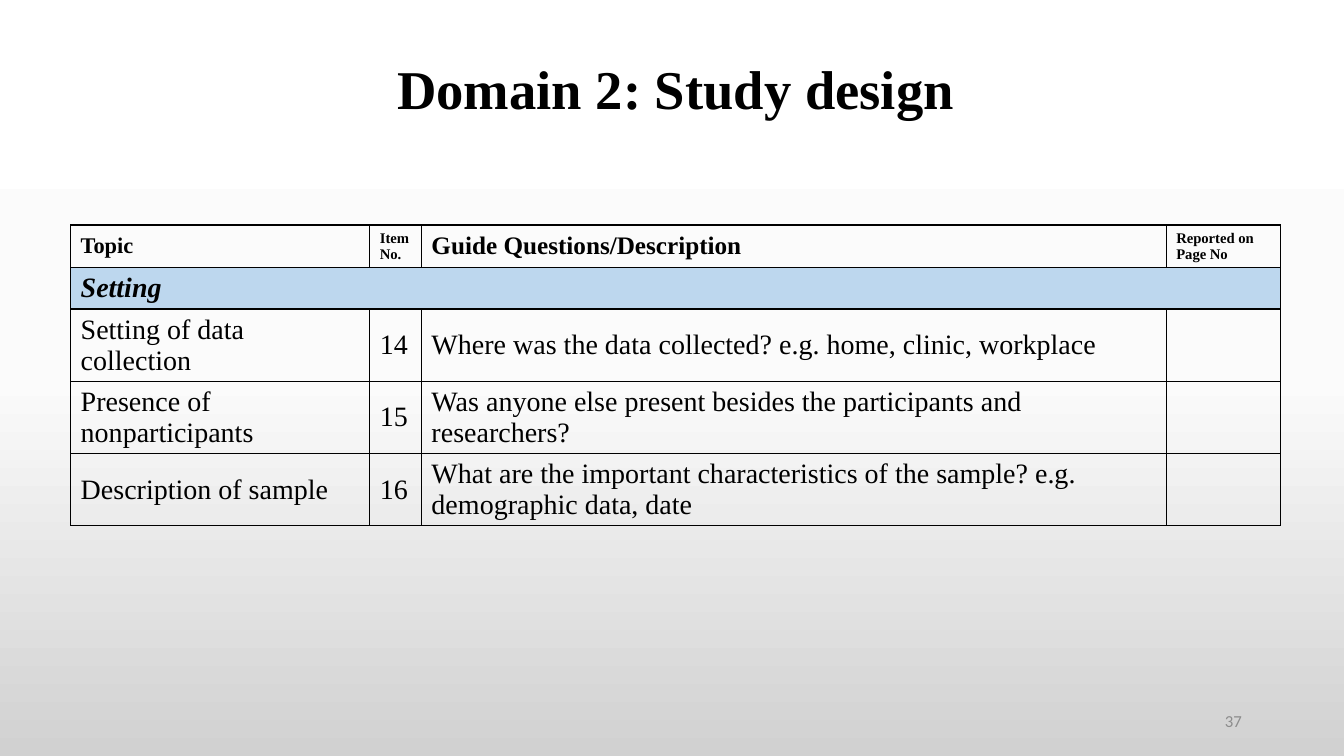
from copy import deepcopy

from pptx import Presentation
from pptx.dml.color import RGBColor
from pptx.enum.text import MSO_ANCHOR as ANCHOR, PP_ALIGN as ALIGN
from pptx.oxml import parse_xml
from pptx.oxml.ns import nsdecls, qn
from pptx.util import Cm, Pt

BLACK = RGBColor(0x00, 0x00, 0x00)
GRAY = RGBColor(0x8C, 0x8C, 0x8C)
BLUE = RGBColor(0xBD, 0xD7, 0xEE)
GRADIENT = [
    (0, RGBColor(0xFF, 0xFF, 0xFF)),
    (0.5, RGBColor(0xFB, 0xFB, 0xFB)),
    (1, RGBColor(0xD1, 0xD1, 0xD1)),
]
SERIF = "Times New Roman"
COLUMN_WIDTHS = [7.54, 1.3, 18.77, 2.87]
HEADER_SIZES = [16, 10.5, 18, 10.5]
ROW_HEIGHT = 1.04
ROWS = [
    ["Topic", "Item No.", "Guide Questions/Description", "Reported on Page No"],
    ["Setting", "", "", ""],
    ["Setting of data collection", "14",
     "Where was the data collected? e.g. home, clinic, workplace", ""],
    ["Presence of nonparticipants", "15",
     "Was anyone else present besides the participants and researchers?", ""],
    ["Description of sample", "16",
     "What are the important characteristics of the sample? e.g. demographic data, date", ""],
]


def format_text(p, size, color=BLACK, name=SERIF, bold=False, italic=False):
    font = p.font
    font.size, font.name = Pt(size), name
    font.bold, font.italic = bold, italic
    font.color.rgb = color


def add_borders(cell):
    tcPr = cell._tc.get_or_add_tcPr()
    for i, side in enumerate(["lnL", "lnR", "lnT", "lnB"]):
        tcPr.insert(i, parse_xml(
            f'<a:{side} {nsdecls("a")} w="{Pt(1)}"><a:solidFill>'
            f'<a:srgbClr val="{BLACK}"/></a:solidFill></a:{side}>'))


prs = Presentation()
prs.slide_width, prs.slide_height = Cm(33.87), Cm(19.05)
s = prs.slides.add_slide(prs.slide_layouts[5])

fill = s.background.fill
fill.gradient()
fill.gradient_angle = 270
stop_list = s._element.find(".//" + qn("a:gsLst"))
stop_list.append(deepcopy(stop_list[-1]))
for stop, (position, color) in zip(fill.gradient_stops, GRADIENT):
    stop.position = position
    stop.color.rgb = color

title = s.shapes.title
title.left, title.top, title.width, title.height = Cm(1.24), Cm(0.48), Cm(31.57), Cm(3.68)
tf = title.text_frame
tf.text = "Domain 2: Study design"
tf.vertical_anchor = ANCHOR.MIDDLE
p = tf.paragraphs[0]
p.alignment = ALIGN.CENTER
p.line_spacing = 0.9
format_text(p, 39, bold=True)

table = s.shapes.add_table(
    len(ROWS), len(COLUMN_WIDTHS), Cm(1.78), Cm(5.67),
    Cm(sum(COLUMN_WIDTHS)), Cm(ROW_HEIGHT * len(ROWS))).table
table.first_row = table.horz_banding = False
for column, width in zip(table.columns, COLUMN_WIDTHS):
    column.width = Cm(width)
for r, texts in enumerate(ROWS):
    table.rows[r].height = Cm(ROW_HEIGHT)
    for c, text in enumerate(texts):
        cell = table.cell(r, c)
        cell.text = text
        cell.vertical_anchor = ANCHOR.MIDDLE
        if r == 1:
            cell.fill.solid()
            cell.fill.fore_color.rgb = BLUE
        else:
            cell.fill.background()
        add_borders(cell)
        size = HEADER_SIZES[c] if r == 0 else 20
        format_text(cell.text_frame.paragraphs[0], size, bold=r < 2, italic=r == 1)
table.cell(1, 0).merge(table.cell(1, 3))

number = s.shapes.add_textbox(Cm(23.93), Cm(17.65), Cm(7.62), Cm(1.02))
tf = number.text_frame
tf.word_wrap = True
tf.vertical_anchor = ANCHOR.MIDDLE
tf.text = "37"
p = tf.paragraphs[0]
p.alignment = ALIGN.RIGHT
format_text(p, 12, GRAY, "Calibri")

prs.save("out.pptx")
